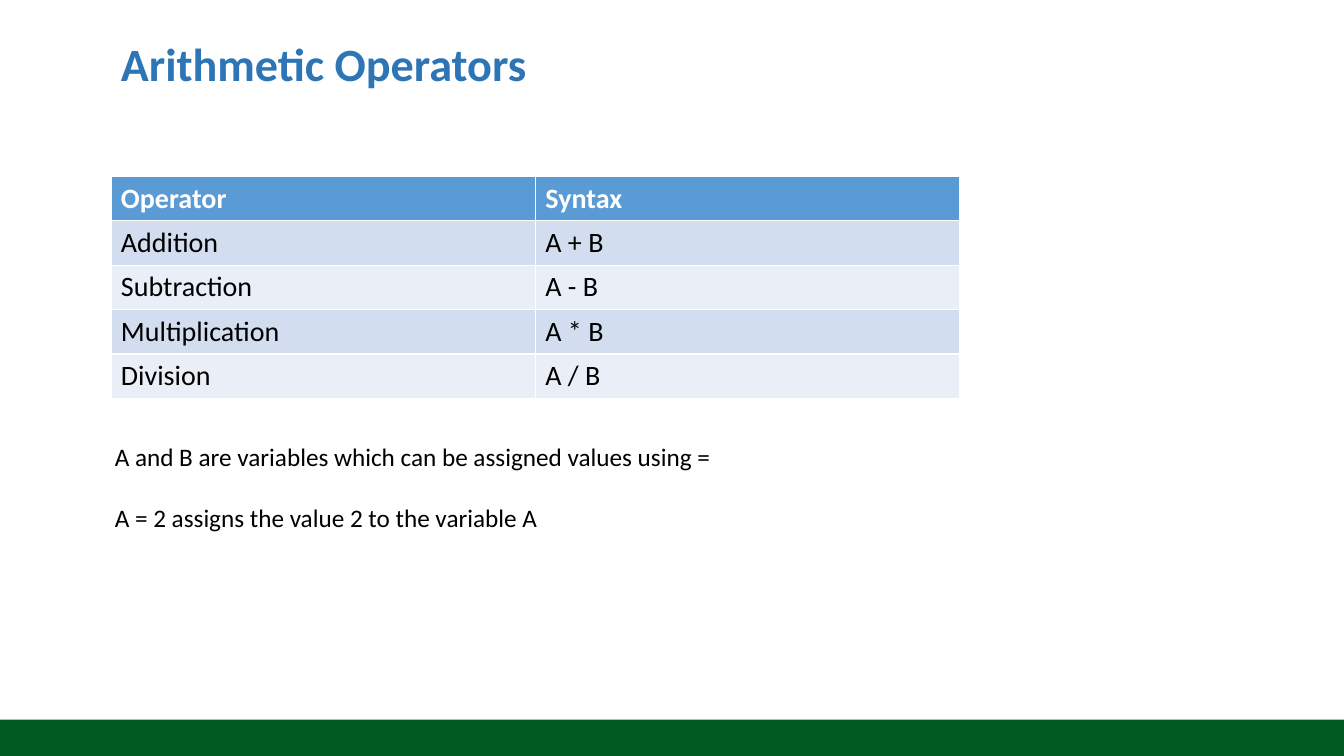
"""Build the slide on arithmetic operators."""
from pptx import Presentation
from pptx.dml.color import RGBColor
from pptx.enum.shapes import MSO_SHAPE
from pptx.enum.text import MSO_ANCHOR, PP_ALIGN
from pptx.util import Inches, Pt

TITLE = "Arithmetic Operators"
ROWS = [
    ("Operator", "Syntax"),
    ("Addition", "A + B"),
    ("Subtraction", "A - B"),
    ("Multiplication", "A * B"),
    ("Division", "A / B"),
]
NOTES = [
    "A and B are variables which can be assigned values using =",
    "A = 2 assigns the value 2 to the variable A",
]
HEAD, BANDS = "5B9BD5", ("EAEFF7", "D2DEEF")
WIDE, HIGH, BAR = 13.33, 7.5, 0.36
LEFT, COL, ROW = 1.1, 4.21, 0.44


def paint(target, color):
    target.solid()
    target.fore_color.rgb = RGBColor.from_string(color)


def style(para, size, color, bold=False):
    for run in para.runs:
        font = run.font
        font.name, font.size, font.bold = "Calibri", Pt(size), bold
        font.color.rgb = RGBColor.from_string(color)


def box(*sizes):
    return [Inches(size) for size in sizes]


def add_title(slide):
    title = slide.shapes.title
    title.left, title.top, title.width, title.height = box(LEFT, 0.23, WIDE - LEFT, 0.87)
    frame = title.text_frame
    frame.text = TITLE
    frame.vertical_anchor = MSO_ANCHOR.MIDDLE
    para = frame.paragraphs[0]
    para.alignment, para.line_spacing = PP_ALIGN.LEFT, 0.9
    style(para, 33, "2E75B6", True)


def add_bar(slide):
    bar = slide.shapes.add_shape(MSO_SHAPE.RECTANGLE, *box(0, HIGH - BAR, WIDE, BAR))
    bar.shadow.inherit = False
    paint(bar.fill, "015A22")
    bar.line.fill.background()


def add_grid(slide):
    count, across = len(ROWS), len(ROWS[0])
    place = box(LEFT, 1.75, COL * across, ROW * count)
    table = slide.shapes.add_table(count, across, *place).table
    for r, words in enumerate(ROWS):
        for c, word in enumerate(words):
            cell = table.cell(r, c)
            cell.text = word
            paint(cell.fill, BANDS[r % 2] if r else HEAD)
            para = cell.text_frame.paragraphs[0]
            style(para, 20, "000000" if r else "FFFFFF", r == 0)


def add_notes(slide):
    frame = slide.shapes.add_textbox(*box(1.04, 4.33, 8.48, 1.01)).text_frame
    frame.word_wrap = True
    frame.text = "\n".join(NOTES)
    for para in frame.paragraphs:
        style(para, 18, "000000")
    frame.paragraphs[1].space_before = Pt(22)


def main():
    deck = Presentation()
    deck.slide_width, deck.slide_height = box(WIDE, HIGH)
    slide = deck.slides.add_slide(deck.slide_layouts[5])
    add_bar(slide)
    add_title(slide)
    add_grid(slide)
    add_notes(slide)
    deck.save("out.pptx")


if __name__ == "__main__":
    main()
